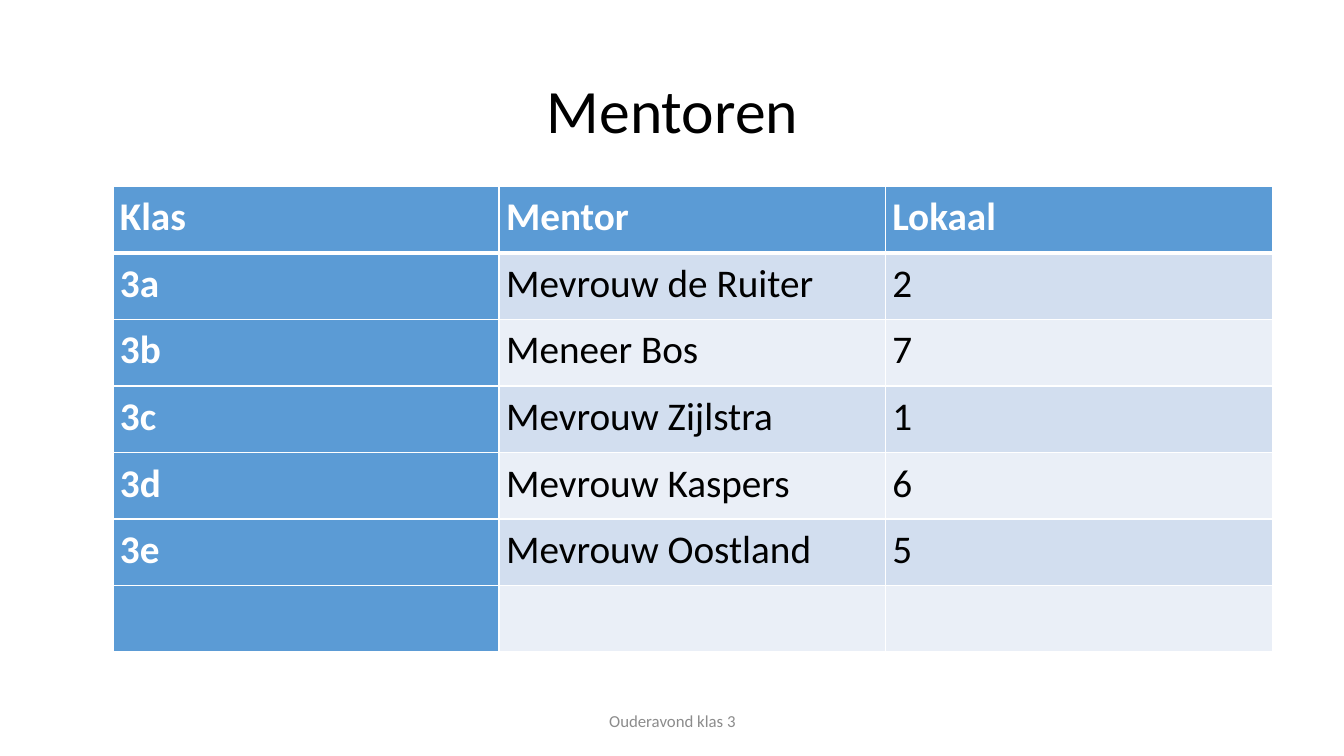
from dataclasses import dataclass

from lxml import etree
from pptx import Presentation
from pptx import util as u
from pptx.dml.color import RGBColor
from pptx.enum import text
from pptx.oxml.ns import qn

PX = 9144  # EMU per px, 100 px to the inch
FONT = "Calibri"
WHITE, BLACK, GREY = "FFFFFF", "000000", "8C8C8C"
BLUE, BANDS = "5B9BD5", ("D2DEEF", "EAEFF7")
COLUMN_WIDTHS = (383, 383, 384)
ROW_HEIGHT = 66


@dataclass
class Box:
    left: int
    top: int
    width: int
    height: int

    def emu(self) -> list[int]:
        return [px * PX for px in (self.left, self.top, self.width, self.height)]


@dataclass
class Mentor:
    group: str = ""
    name: str = ""
    room: str = ""


HEADER = Mentor("Klas", "Mentor", "Lokaal")
MENTORS = [
    Mentor("3a", "Mevrouw de Ruiter", "2"),
    Mentor("3b", "Meneer Bos", "7"),
    Mentor("3c", "Mevrouw Zijlstra", "1"),
    Mentor("3d", "Mevrouw Kaspers", "6"),
    Mentor("3e", "Mevrouw Oostland", "5"),
    Mentor(),
]


def rgb(value: str) -> RGBColor:
    return RGBColor.from_string(value)


def write(frame, words: str, size: int, color: str, bold: bool = False, **layout) -> None:
    paragraph = frame.paragraphs[0]
    for name, value in layout.items():
        setattr(paragraph, name, value)
    run = paragraph.add_run()
    run.text = words
    for name, value in {"name": FONT, "size": u.Pt(size), "bold": bold}.items():
        setattr(run.font, name, value)
    run.font.color.rgb = rgb(color)


def center_frame(frame) -> None:
    frame_format = {
        "word_wrap": True,
        "auto_size": text.MSO_AUTO_SIZE.NONE,
        "vertical_anchor": text.MSO_ANCHOR.MIDDLE,
    }
    for name, value in frame_format.items():
        setattr(frame, name, value)


def add_borders(cell, top: int, bottom: int) -> None:
    properties = cell._tc.get_or_add_tcPr()
    for side, points in {"L": 1, "R": 1, "T": top, "B": bottom}.items():
        line = etree.SubElement(properties, qn(f"a:ln{side}"), w=str(u.Pt(points)))
        fill = etree.SubElement(line, qn("a:solidFill"))
        etree.SubElement(fill, qn("a:srgbClr"), val=WHITE)


def fill_cell(cell, words: str, row: int, column: int) -> None:
    strong = row == 0 or column == 0
    margins = {"margin_left": 7, "margin_right": 7, "margin_top": 0, "margin_bottom": 0}
    for name, value in margins.items():
        setattr(cell, name, value * PX)
    add_borders(cell, top=3 if row == 1 else 1, bottom=3 if row == 0 else 1)
    cell.fill.solid()
    cell.fill.fore_color.rgb = rgb(BLUE if strong else BANDS[(row - 1) % 2])
    if words:
        write(cell.text_frame, words, 28, WHITE if strong else BLACK, strong,
              line_spacing=1.15, space_after=u.Pt(10))


def add_mentor_table(slide, box: Box) -> None:
    rows = [HEADER, *MENTORS]
    table = slide.shapes.add_table(len(rows), len(COLUMN_WIDTHS), *box.emu()).table
    table.first_col = True
    for column, width in zip(table.columns, COLUMN_WIDTHS):
        column.width = width * PX
    for row, mentor in enumerate(rows):
        table.rows[row].height = ROW_HEIGHT * PX
        for column, words in enumerate((mentor.group, mentor.name, mentor.room)):
            fill_cell(table.cell(row, column), words, row, column)


def main() -> None:
    presentation = Presentation()
    presentation.slide_width, presentation.slide_height = 1333 * PX, 750 * PX
    slide = presentation.slides.add_slide(presentation.slide_layouts[5])

    # Title
    title = slide.shapes.title
    title.left, title.top, title.width, title.height = Box(92, 40, 1150, 145).emu()
    center_frame(title.text_frame)
    write(title.text_frame, "Mentoren", 44, BLACK,
          alignment=text.PP_ALIGN.CENTER, line_spacing=0.9)

    # Footer
    footer = slide.shapes.add_textbox(*Box(442, 695, 450, 40).emu())
    center_frame(footer.text_frame)
    write(footer.text_frame, "Ouderavond klas 3", 12, GREY,
          alignment=text.PP_ALIGN.CENTER)

    # Table of classes, mentors and rooms
    table_height = ROW_HEIGHT * (len(MENTORS) + 1)
    add_mentor_table(slide, Box(112, 185, sum(COLUMN_WIDTHS), table_height))

    presentation.save("out.pptx")


if __name__ == "__main__":
    main()
